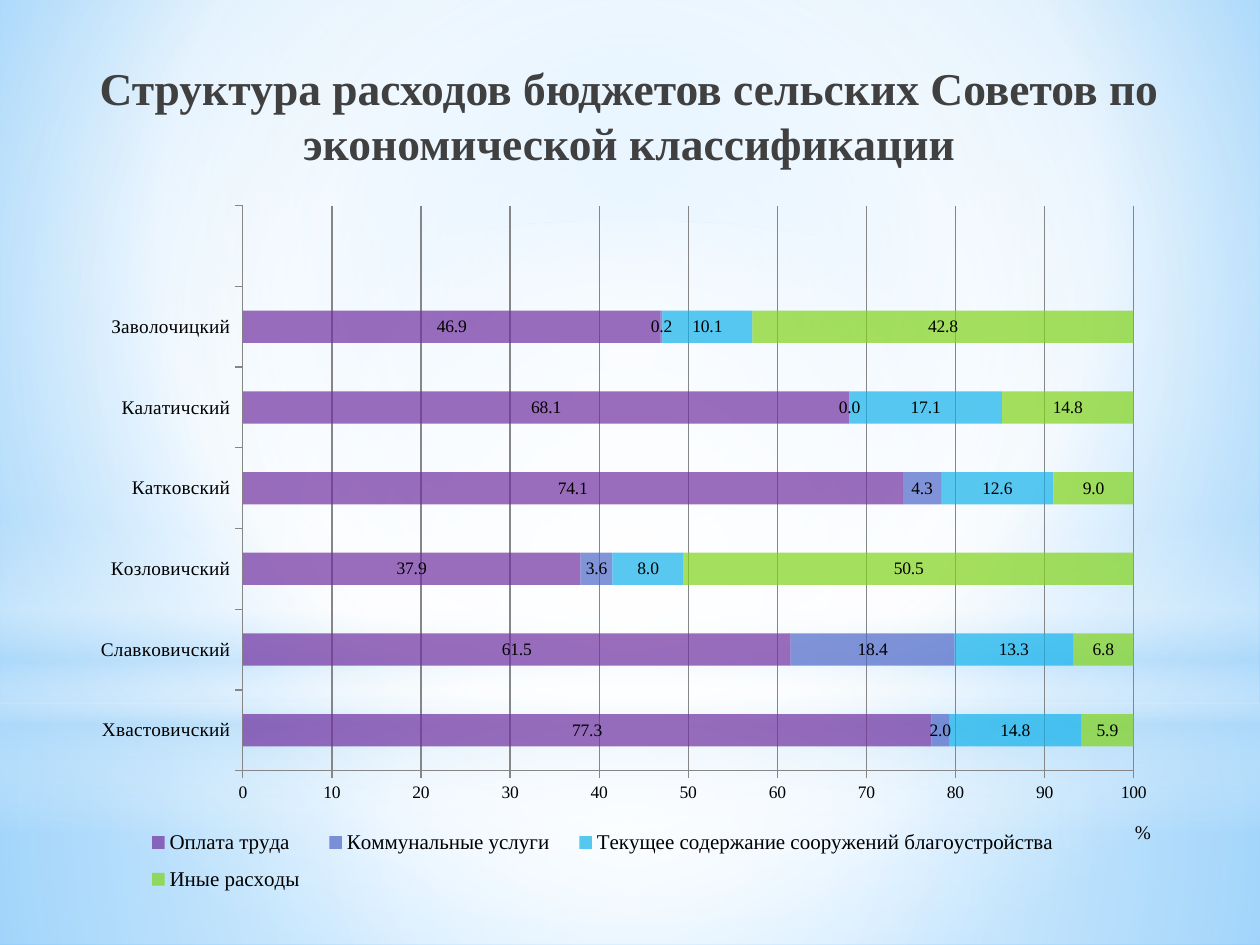
"""Build a slide with a stacked bar chart of rural council spending."""
from lxml.etree import SubElement
from pptx import Presentation
from pptx.chart.data import CategoryChartData
from pptx.dml.color import RGBColor
from pptx.enum.chart import XL_CHART_TYPE, XL_LABEL_POSITION, XL_LEGEND_POSITION, XL_TICK_MARK
from pptx.enum.shapes import MSO_SHAPE
from pptx.enum.text import MSO_ANCHOR, PP_ALIGN
from pptx.oxml.ns import qn
from pptx.util import Pt

WHITE = RGBColor(0xFF, 0xFF, 0xFF)
BLACK = RGBColor(0x00, 0x00, 0x00)
TITLE_GRAY = RGBColor(0x40, 0x40, 0x40)
AXIS_GRAY = RGBColor(0x86, 0x86, 0x86)
PALE_BLUE = RGBColor(0xB4, 0xDC, 0xFA)
SKY_BLUE = RGBColor(0x9E, 0xD5, 0xFF)
DEEP_BLUE = RGBColor(0x5B, 0xB9, 0xFF)
PURPLE = RGBColor(0x70, 0x30, 0xA0)
INDIGO = RGBColor(0x4E, 0x67, 0xC8)
CYAN = RGBColor(0x12, 0xB2, 0xEB)
GREEN = RGBColor(0x81, 0xD3, 0x1A)

FONT = "Times New Roman"
CENTER = (50, 50, 50, 50)
CATEGORIES = ["Хвастовичский", "Славковичский", "Козловичский", "Катковский",
              "Калатичский", "Заволочицкий", ""]
SERIES = [
    ("Оплата труда", PURPLE, (77.3, 61.5, 37.9, 74.1, 68.1, 46.9, None)),
    ("Коммунальные услуги", INDIGO, (2, 18.4, 3.6, 4.3, 0, 0.2, None)),
    ("Текущее содержание сооружений благоустройства", CYAN,
     (14.8, 13.3, 8, 12.6, 17.1, 10.1, None)),
    ("Иные расходы", GREEN, (5.9, 6.8, 50.5, 9, 14.8, 42.8, None)),
]
BACKDROP = [
    (MSO_SHAPE.RECTANGLE, 401.76, 138.24,
     [(0, WHITE, 91), (37, WHITE, 76), (100, PALE_BLUE, 79)], CENTER),
    (MSO_SHAPE.RECTANGLE, 0, 401.76,
     [(0, WHITE, 89), (48, WHITE, 62), (100, PALE_BLUE, 79)], CENTER),
    (MSO_SHAPE.RECTANGLE, 296.64, 180,
     [(0, WHITE, 0), (29, WHITE, 30), (45, PALE_BLUE, 40), (55, WHITE, 26),
      (65, PALE_BLUE, 60), (100, WHITE, 0)], None),
    (MSO_SHAPE.OVAL, 126, 401.76, [(0, WHITE, 100), (56, WHITE, 0)], CENTER),
]


def set_alpha(color_element, percent):
    """Give a colour element an opacity in percent."""
    SubElement(color_element, qn("a:alpha"), val=str(percent * 1000))


def set_gradient(fill, owner, stops, focus):
    """Fill with a circular gradient, or a downward one when focus is None."""
    fill.gradient()
    gradient = next(owner.iter(qn("a:gradFill")))
    for child in list(gradient):
        gradient.remove(child)
    stop_list = SubElement(gradient, qn("a:gsLst"))
    for position, color, opacity in stops:
        stop = SubElement(stop_list, qn("a:gs"), pos=str(position * 1000))
        set_alpha(SubElement(stop, qn("a:srgbClr"), val=str(color)), opacity)
    if focus is None:
        SubElement(gradient, qn("a:lin"), ang="5400000", scaled="0")
    else:
        circle = SubElement(gradient, qn("a:path"), {"path": "circle"})
        edges = {side: str(value * 1000) for side, value in zip("ltrb", focus)}
        SubElement(circle, qn("a:fillToRect"), edges)


def add_backdrop(slide, width):
    """Add the background gradient and the translucent layers over it."""
    set_gradient(slide.background.fill, slide.element,
                 [(0, SKY_BLUE, 100), (60, WHITE, 100), (100, DEEP_BLUE, 100)],
                 (20, 10, 20, 60))
    for kind, top, height, stops, focus in BACKDROP:
        shape = slide.shapes.add_shape(kind, 0, Pt(top), width, Pt(height))
        shape.shadow.inherit = False
        shape.line.fill.background()
        set_gradient(shape.fill, shape.element.spPr, stops, focus)


def style_font(font, size, color=BLACK, bold=False):
    """Set the common typeface with a size, colour and weight."""
    font.name = FONT
    font.size = Pt(size)
    font.color.rgb = color
    font.bold = bold


def add_title(slide, text):
    """Add the centred slide heading."""
    box = slide.shapes.add_textbox(Pt(25.2), Pt(25.92), Pt(668.88), Pt(79.2))
    frame = box.text_frame
    frame.word_wrap = True
    frame.vertical_anchor = MSO_ANCHOR.MIDDLE
    paragraph = frame.paragraphs[0]
    paragraph.text = text
    paragraph.alignment = PP_ALIGN.CENTER
    style_font(paragraph.font, 26, TITLE_GRAY, bold=True)


def set_layout(parent, inner=False, **fractions):
    """Place a chart part by fractions of the chart area."""
    layout = parent.find(qn("c:layout"))
    if layout is None:
        layout = parent.makeelement(qn("c:layout"))
        overlay = parent.find(qn("c:overlay"))
        parent.insert(0 if overlay is None else parent.index(overlay), layout)
    manual = SubElement(layout, qn("c:manualLayout"))
    if inner:
        SubElement(manual, qn("c:layoutTarget"), val="inner")
    for key in "xy":
        SubElement(manual, qn(f"c:{key}Mode"), val="edge")
    for key, value in fractions.items():
        SubElement(manual, qn(f"c:{key}"), val=str(value))


def style_axes(chart):
    """Format both axes, the gridlines and the unit title."""
    category_axis, value_axis = chart.category_axis, chart.value_axis
    for axis, size in ((category_axis, 11), (value_axis, 10)):
        axis.major_tick_mark = XL_TICK_MARK.OUTSIDE
        axis.format.line.color.rgb = AXIS_GRAY
        style_font(axis.tick_labels.font, size)
    value_axis.minimum_scale = 0
    value_axis.maximum_scale = 100
    value_axis.major_unit = 10
    value_axis.tick_labels.number_format = "#,##0"
    value_axis.tick_labels.number_format_is_linked = False
    value_axis.has_major_gridlines = True
    value_axis.major_gridlines.format.line.color.rgb = AXIS_GRAY
    paragraph = value_axis.axis_title.text_frame.paragraphs[0]
    paragraph.text = "%"
    style_font(paragraph.font, 11)
    set_layout(value_axis.axis_title._element, x=0.96, y=0.86)


def style_series(series, color):
    """Colour one series and show its values."""
    series.format.fill.solid()
    series.format.fill.fore_color.rgb = color
    set_alpha(next(series._element.iter(qn("a:srgbClr"))), 70)
    labels = series.data_labels
    labels.show_value = True
    labels.number_format = "#,##0.0"
    labels.number_format_is_linked = False
    labels.position = XL_LABEL_POSITION.CENTER
    style_font(labels.font, 10)


def add_spending_chart(slide):
    """Add the stacked bar chart with its legend."""
    data = CategoryChartData(number_format="#,##0.0")
    data.categories = CATEGORIES
    for name, _, values in SERIES:
        data.add_series(name, values)
    chart = slide.shapes.add_chart(XL_CHART_TYPE.BAR_STACKED, Pt(42.48), Pt(105.84),
                                   Pt(629.28), Pt(419.76), data).chart
    chart.has_title = False
    style_font(chart.font, 18)
    style_axes(chart)
    plot = chart.plots[0]
    plot.gap_width = 150
    plot.overlap = 100
    plot.vary_by_categories = False
    for series, (_, color, _) in zip(plot.series, SERIES):
        style_series(series, color)
    set_layout(next(chart.element.iter(qn("c:plotArea"))), inner=True,
               x=0.153, y=0.028, w=0.809, h=0.769)
    chart.has_legend = True
    chart.legend.position = XL_LEGEND_POSITION.BOTTOM
    chart.legend.include_in_layout = False
    style_font(chart.legend.font, 12)
    set_layout(chart.legend._element, x=0.05, y=0.86, w=0.86, h=0.12)


def main():
    """Create and save the presentation."""
    presentation = Presentation()
    presentation.slide_width = Pt(720)
    presentation.slide_height = Pt(540)
    slide = presentation.slides.add_slide(presentation.slide_layouts[6])
    add_backdrop(slide, presentation.slide_width)
    add_title(slide, "Структура расходов бюджетов сельских Советов по экономической классификации")
    add_spending_chart(slide)
    presentation.save("out.pptx")


if __name__ == "__main__":
    main()
